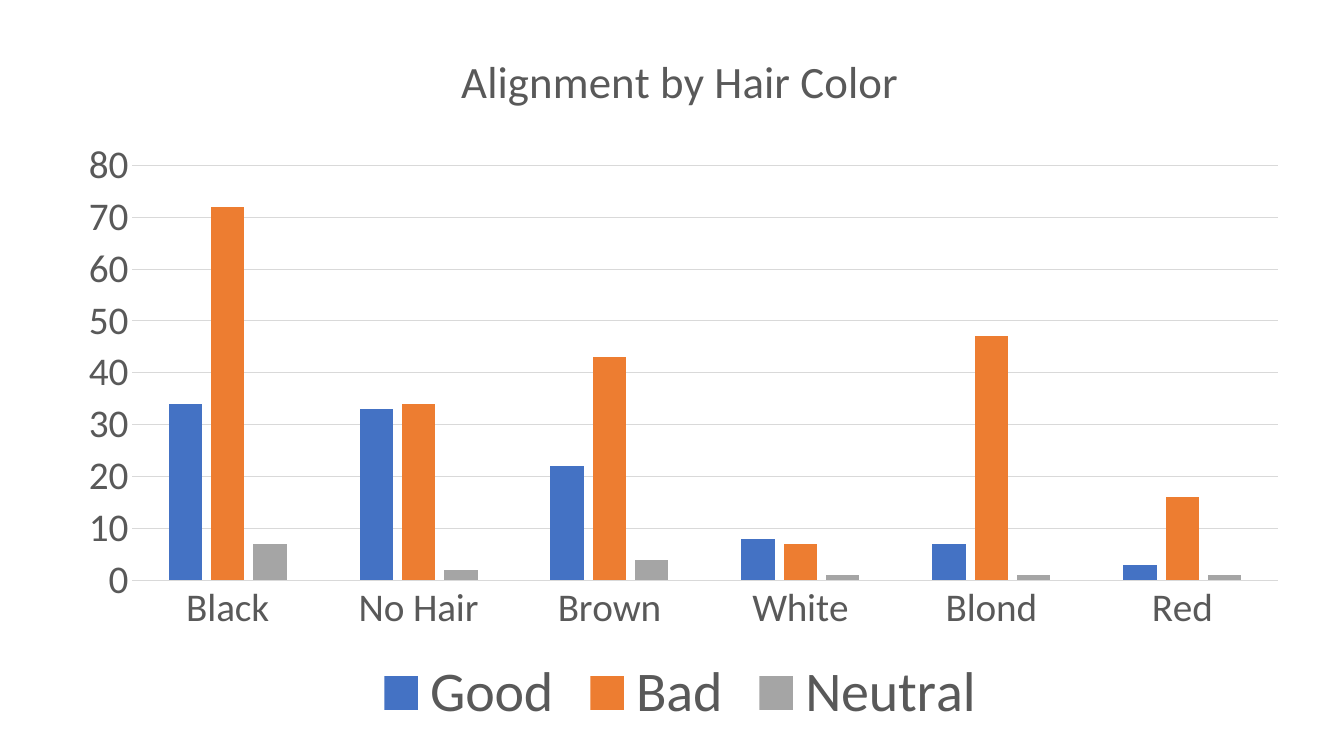
from lxml import etree
from pptx import Presentation
from pptx.chart.data import CategoryChartData
from pptx.dml.color import RGBColor
from pptx.enum.chart import XL_CHART_TYPE, XL_LEGEND_POSITION, XL_TICK_MARK
from pptx.oxml.ns import qn
from pptx.util import Emu, Pt

PX = 9144
COLUMN = XL_CHART_TYPE.COLUMN_CLUSTERED
BOTTOM = XL_LEGEND_POSITION.BOTTOM
NO_TICK = XL_TICK_MARK.NONE

GREY = RGBColor(0x59, 0x59, 0x59)
RULE = RGBColor(0xD9, 0xD9, 0xD9)
BLUE = RGBColor(0x44, 0x72, 0xC4)
ORANGE = RGBColor(0xED, 0x7D, 0x31)
SILVER = RGBColor(0xA5, 0xA5, 0xA5)

FACE = "Calibri"
HAIR = ["Black", "No Hair", "Brown", "White", "Blond", "Red"]
SERIES = [
    ("Good", BLUE, [34, 33, 22, 8, 7, 3]),
    ("Bad", ORANGE, [72, 34, 43, 7, 47, 16]),
    ("Neutral", SILVER, [7, 2, 4, 1, 1, 1]),
]


def style(font, size):
    font.name = FACE
    font.size = Pt(size)
    font.bold = False
    font.color.rgb = GREY


def rule(line):
    line.color.rgb = RULE
    line.width = Pt(0.75)


def place(chart, left, top, width, height):
    area = chart._chartSpace.chart.plotArea
    for old in area.findall(qn("c:layout")):
        area.remove(old)
    layout = etree.Element(qn("c:layout"))
    manual = etree.SubElement(layout, qn("c:manualLayout"))
    parts = [("layoutTarget", "inner"), ("xMode", "edge"), ("yMode", "edge"),
             ("x", left), ("y", top), ("w", width), ("h", height)]
    for tag, value in parts:
        etree.SubElement(manual, qn("c:" + tag)).set("val", str(value))
    area.insert(0, layout)


def add_bars(slide, left, top, width, height):
    data = CategoryChartData()
    data.categories = HAIR
    for name, _, values in SERIES:
        data.add_series(name, values)
    box = [Emu(n * PX) for n in (left, top, width, height)]
    chart = slide.shapes.add_chart(COLUMN, *box, data).chart
    chart.font.name = FACE

    chart.has_title = True
    title = chart.chart_title
    title.include_in_layout = False
    title.text_frame.text = "Alignment by Hair Color"
    style(title.text_frame.paragraphs[0].font, 32)

    plot = chart.plots[0]
    plot.gap_width = 219
    plot.overlap = -27
    plot.vary_by_categories = False
    for series, (_, color, _) in zip(plot.series, SERIES):
        series.format.fill.solid()
        series.format.fill.fore_color.rgb = color

    for axis in (chart.category_axis, chart.value_axis):
        axis.major_tick_mark = NO_TICK
        axis.minor_tick_mark = NO_TICK
        style(axis.tick_labels.font, 28)
    rule(chart.category_axis.format.line)
    scale = chart.value_axis
    scale.minimum_scale = 0
    scale.maximum_scale = 80
    scale.major_unit = 10
    scale.format.line.fill.background()
    rule(scale.major_gridlines.format.line)

    chart.has_legend = True
    chart.legend.position = BOTTOM
    chart.legend.include_in_layout = False
    style(chart.legend.font, 40)
    place(chart, 0.06, 0.2, 0.92, 0.58)


def main():
    deck = Presentation()
    deck.slide_width = Emu(1333 * PX)
    deck.slide_height = Emu(750 * PX)
    slide = deck.slides.add_slide(deck.slide_layouts[6])
    add_bars(slide, 57, 22, 1235, 710)
    deck.save("out.pptx")


if __name__ == "__main__":
    main()
